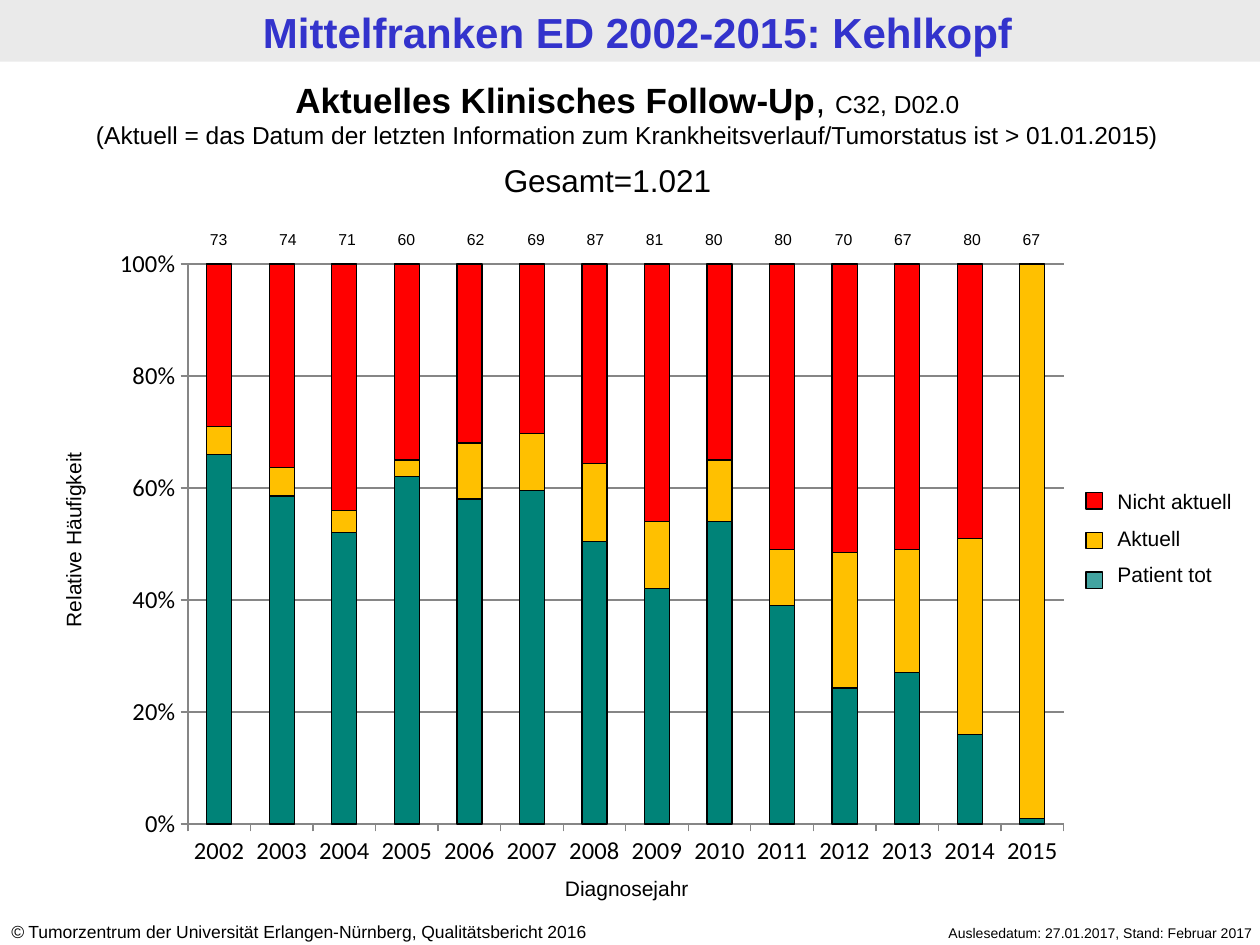
import dataclasses

import lxml.etree
import pptx
import pptx.chart.data
import pptx.dml.color
import pptx.enum.chart
import pptx.enum.shapes
import pptx.enum.text
import pptx.oxml
import pptx.oxml.ns
import pptx.util

Inches = pptx.util.Inches
Pt = pptx.util.Pt
Align = pptx.enum.text.PP_ALIGN
qn = pptx.oxml.ns.qn


def rgb(value):
    return pptx.dml.color.RGBColor.from_string(value)


@dataclasses.dataclass(frozen=True)
class Theme:
    font: str = "Arial"
    chart_font: str = "Calibri"
    text: str = "000000"
    title: str = "3333CC"
    band: str = "EAEAEA"
    grid: str = "868686"
    dead: str = "008378"
    dead_key: str = "008380"
    current: str = "FFC000"
    outdated: str = "FF0000"
    title_size: float = 24
    heading_size: float = 20
    total_size: float = 18
    detail_size: float = 14
    axis_size: float = 14
    label_size: float = 12
    footer_size: float = 10
    count_size: float = 9
    date_size: float = 8
    outline: float = 0.75


class SlideBuilder:
    def __init__(self, slide, theme):
        self.slide = slide
        self.theme = theme

    def style_font(self, font, size, color=None, bold=False):
        font.name = self.theme.font
        font.size = Pt(size)
        font.bold = bold
        font.color.rgb = rgb(color or self.theme.text)

    def title(self, box, text):
        shape = self.slide.shapes.title
        shape.left, shape.top, shape.width, shape.height = map(Inches, box)
        frame = shape.text_frame
        frame.text = text
        frame.margin_top = frame.margin_bottom = Inches(0.04)
        frame.vertical_anchor = pptx.enum.text.MSO_ANCHOR.MIDDLE
        paragraph = frame.paragraphs[0]
        paragraph.alignment = Align.CENTER
        self.style_font(paragraph.font, self.theme.title_size, self.theme.title, True)

    def text(self, box, lines, size, align=Align.LEFT, gap=0, rotation=0):
        shape = self.slide.shapes.add_textbox(*map(Inches, box))
        shape.rotation = rotation
        frame = shape.text_frame
        frame.word_wrap = True
        for index, line in enumerate(lines):
            paragraph = frame.add_paragraph() if index else frame.paragraphs[0]
            paragraph.text = line
            paragraph.alignment = align
            paragraph.space_before = Pt(gap if index else 0)
            self.style_font(paragraph.font, size)
        return frame

    def rectangle(self, box, fill, outlined=False, opacity=None):
        shape = self.slide.shapes.add_shape(
            pptx.enum.shapes.MSO_SHAPE.RECTANGLE, *map(Inches, box))
        shape.shadow.inherit = False
        shape.fill.solid()
        shape.fill.fore_color.rgb = rgb(fill)
        if outlined:
            shape.line.color.rgb = rgb(self.theme.text)
            shape.line.width = Pt(self.theme.outline)
        else:
            shape.line.fill.background()
        if opacity is not None:
            color = shape.fill._xPr.find(".//" + qn("a:srgbClr"))
            alpha = lxml.etree.SubElement(color, qn("a:alpha"))
            alpha.set("val", str(opacity * 1000))
        return shape

    def stacked_chart(self, box, categories, series, plot):
        """Add a 100 % column chart; plot holds the inner area as fractions of the box."""
        data = pptx.chart.data.CategoryChartData()
        data.categories = categories
        for name, values, _ in series:
            data.add_series(name, values)
        kind = pptx.enum.chart.XL_CHART_TYPE.COLUMN_STACKED_100
        chart = self.slide.shapes.add_chart(kind, *map(Inches, box), data).chart
        chart.has_legend = False
        chart.has_title = False
        chart.font.name = self.theme.chart_font
        chart.font.size = Pt(self.theme.axis_size)
        chart.font.color.rgb = rgb(self.theme.text)
        columns = chart.plots[0]
        columns.gap_width = 150
        columns.overlap = 100
        columns.vary_by_categories = False
        for item, (_, _, color) in zip(columns.series, series):
            item.format.fill.solid()
            item.format.fill.fore_color.rgb = rgb(color)
            item.format.line.color.rgb = rgb(self.theme.text)
            item.format.line.width = Pt(self.theme.outline)
        value_axis = chart.value_axis
        value_axis.minimum_scale, value_axis.maximum_scale = 0, 1
        value_axis.major_unit = 0.2
        value_axis.tick_labels.number_format = "0%"
        value_axis.tick_labels.number_format_is_linked = False
        lines = [value_axis.major_gridlines.format.line]
        for axis in (value_axis, chart.category_axis):
            axis.major_tick_mark = pptx.enum.chart.XL_TICK_MARK.OUTSIDE
            lines.append(axis.format.line)
        for line in lines:
            line.color.rgb = rgb(self.theme.grid)
            line.width = Pt(self.theme.outline)
        self.place_plot(chart, plot)

    def place_plot(self, chart, plot):
        area = chart._chartSpace.find(".//" + qn("c:plotArea"))
        for old in area.findall(qn("c:layout")):
            area.remove(old)
        layout = pptx.oxml.parse_xml(
            f'<c:layout {pptx.oxml.ns.nsdecls("c")}><c:manualLayout/></c:layout>')
        settings = [("layoutTarget", "inner"), ("xMode", "edge"), ("yMode", "edge"),
                    *zip("xywh", plot)]
        for tag, value in settings:
            lxml.etree.SubElement(layout[0], qn("c:" + tag)).set("val", str(value))
        area.insert(0, layout)


def main():
    presentation = pptx.Presentation()
    presentation.slide_width, presentation.slide_height = Inches(10), Inches(7.5)
    theme = Theme()
    slide = presentation.slides.add_slide(presentation.slide_layouts[5])
    builder = SlideBuilder(slide, theme)

    band = builder.rectangle((0, 0, 10, 0.49), theme.band)
    slide.shapes._spTree.insert(2, band._element)
    builder.title((0.06, 0.01, 10, 0.49), "Mittelfranken ED 2002-2015: Kehlkopf")

    footer = builder.text((-0.01, 7.26, 5.24, 0.27), [""], theme.footer_size).paragraphs[0]
    footer.add_run().text = "©"
    footer.runs[0].font.italic = True
    footer.add_run().text = " Tumorzentrum der Universität Erlangen-Nürnberg, Qualitätsbericht 2016"
    builder.text((6.65, 7.29, 3.39, 0.24), ["Auslesedatum: 27.01.2017, Stand: Februar 2017"],
                 theme.date_size, Align.RIGHT)

    series = [
        ("Patient tot", (66, 58, 52, 62, 58, 59, 51, 42, 54, 39, 24, 27, 16, 1), theme.dead),
        ("Aktuell", (5, 5, 4, 3, 10, 10, 14, 12, 11, 10, 24, 22, 35, 99), theme.current),
        ("Nicht aktuell", (29, 36, 44, 35, 32, 30, 36, 46, 35, 51, 51, 51, 49, None),
         theme.outdated),
    ]
    builder.stacked_chart((0.79, 1.87, 7.8, 5.11), [str(year) for year in range(2002, 2016)],
                          series, (0.09, 0.044, 0.891, 0.87))
    builder.text((-0.62, 4.13, 2.41, 0.31), ["Relative Häufigkeit"], theme.label_size,
                 Align.CENTER, rotation=270)
    builder.text((3.85, 6.9, 2.25, 0.31), ["Diagnosejahr"], theme.label_size, Align.CENTER)

    builder.text((8.77, 3.83, 1.42, 0.91), [name for name, _, _ in reversed(series)],
                 theme.label_size, gap=6.5)
    keys = [(theme.outdated, None), (theme.current, None), (theme.dead_key, 74)]
    for row, (color, opacity) in enumerate(keys):
        builder.rectangle((8.62, 3.91 + 0.315 * row, 0.13, 0.13), color, True, opacity)

    heading = builder.text(
        (-0.04, 0.57, 10.04, 0.67),
        ["", "(Aktuell = das Datum der letzten Information zum Krankheitsverlauf/Tumorstatus"
             " ist > 01.01.2015)"],
        theme.detail_size, Align.CENTER).paragraphs[0]
    for text, size, bold in (("Aktuelles Klinisches Follow-Up", theme.heading_size, True),
                             (", ", theme.heading_size, False),
                             ("C32, D02.0", theme.detail_size, False)):
        run = heading.add_run()
        run.text = text
        builder.style_font(run.font, size, bold=bold)
    builder.text((3.9, 1.23, 2.2, 0.4), ["Gesamt=1.021"], theme.total_size)

    counts = (73, 74, 71, 60, 62, 69, 87, 81, 80, 80, 70, 67, 80, 67)
    lefts = (1.46, 2.01, 2.48, 2.95, 3.5, 3.98, 4.45, 4.92, 5.39, 5.94, 6.42, 6.89, 7.44, 7.91)
    for left, count in zip(lefts, counts):
        builder.text((left, 1.77, 0.55, 0.25), [str(count)], theme.count_size, Align.CENTER)

    presentation.save("out.pptx")


if __name__ == "__main__":
    main()
